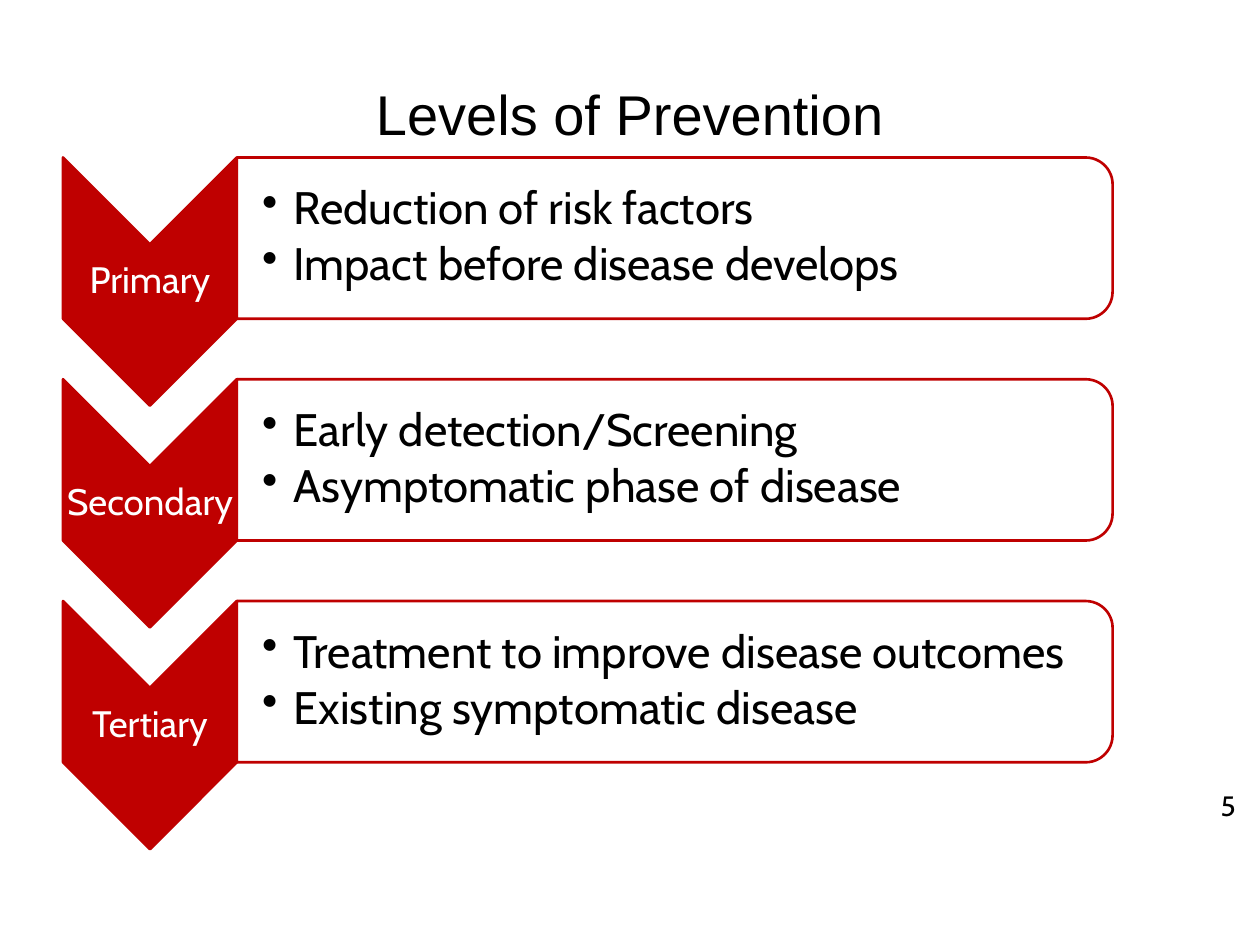
from pptx import Presentation
from pptx import util as u
from pptx.dml.color import RGBColor
from pptx.enum import shapes, text
from pptx.oxml import parse_xml
from pptx.oxml.ns import nsdecls, qn

COLORS = {"red": "BF0000", "white": "FFFFFF", "black": "000000"}
FONT = "Cabin"

LEVELS = [
    ("Primary", ["Reduction of risk factors", "Impact before disease develops"]),
    ("Secondary", ["Early detection/Screening", "Asymptomatic phase of disease"]),
    ("Tertiary", ["Treatment to improve disease outcomes", "Existing symptomatic disease"]),
]
TOP = 1.25
ROW_PITCH = 1.76
LABEL_LEFT, LABEL_WIDTH = 0.5, 1.38
CHEVRON_LENGTH = 1.97
PANEL_LEFT = LABEL_LEFT + LABEL_WIDTH
PANEL_WIDTH, PANEL_HEIGHT = 6.95, 1.28


def color(name):
    return RGBColor.from_string(COLORS[name])


def add_run(paragraph, words, size, color_name, font=FONT):
    run = paragraph.add_run()
    run.text = words
    run.font.size = u.Pt(size)
    run.font.name = font
    run.font.color.rgb = color(color_name)


def set_frame(frame, left_inset, inset):
    frame.word_wrap = True
    frame.vertical_anchor = text.MSO_ANCHOR.MIDDLE
    frame.margin_left = u.Inches(left_inset)
    frame.margin_top = frame.margin_right = frame.margin_bottom = u.Inches(inset)


def add_text_box(slide, left, top, width, height, left_inset, inset):
    box = slide.shapes.add_textbox(*map(u.Inches, (left, top, width, height)))
    set_frame(box.text_frame, left_inset, inset)
    return box.text_frame


def add_turned_shape(slide, kind, left, top, width, height, fill_name):
    turned_left = left + (width - height) / 2
    turned_top = top + (height - width) / 2
    shape = slide.shapes.add_shape(
        kind, *map(u.Inches, (turned_left, turned_top, height, width)))
    shape.rotation = 90
    shape.shadow.inherit = False
    shape.fill.solid()
    shape.fill.fore_color.rgb = color(fill_name)
    shape.line.color.rgb = color("red")
    shape.line.width = u.Pt(1.5)
    return shape


def set_opacity(shape, percent):
    fill_color = shape.fill._xPr.find(qn("a:solidFill"))[0]
    fill_color.append(parse_xml(f'<a:alpha {nsdecls("a")} val="{percent * 1000}"/>'))


def add_bullet(paragraph):
    properties = paragraph._p.get_or_add_pPr()
    properties.set("marL", str(u.Inches(0.25)))
    properties.set("indent", str(u.Inches(-0.25)))
    properties.append(parse_xml(f'<a:buChar {nsdecls("a")} char="•"/>'))


def add_title(slide, words):
    title = slide.shapes.title
    title.left, title.top, title.width, title.height = map(u.Inches, (0.25, 0.4, 9.5, 1))
    title.text_frame.vertical_anchor = text.MSO_ANCHOR.MIDDLE
    paragraph = title.text_frame.paragraphs[0]
    paragraph.alignment = text.PP_ALIGN.CENTER
    add_run(paragraph, words, 32, "black", "Arial")


def add_label(slide, top, words):
    add_turned_shape(slide, shapes.MSO_SHAPE.CHEVRON, LABEL_LEFT, top,
                     LABEL_WIDTH, CHEVRON_LENGTH, "red")
    frame = add_text_box(slide, LABEL_LEFT, top + LABEL_WIDTH / 2,
                         LABEL_WIDTH, CHEVRON_LENGTH - LABEL_WIDTH, 0.01, 0.01)
    paragraph = frame.paragraphs[0]
    paragraph.alignment = text.PP_ALIGN.CENTER
    paragraph.line_spacing = 0.9
    paragraph.space_after = u.Pt(7)
    add_run(paragraph, words, 21, "white")


def add_panel(slide, top, items):
    panel = add_turned_shape(slide, shapes.MSO_SHAPE.ROUND_2_SAME_RECTANGLE,
                             PANEL_LEFT, top, PANEL_WIDTH, PANEL_HEIGHT, "white")
    set_opacity(panel, 90)
    frame = add_text_box(slide, PANEL_LEFT, top + 0.06,
                         PANEL_WIDTH - 0.06, PANEL_HEIGHT - 0.12, 0.2, 0.02)
    for index, item in enumerate(items):
        paragraph = frame.add_paragraph() if index else frame.paragraphs[0]
        paragraph.level = 1
        paragraph.line_spacing = 0.9
        paragraph.space_after = u.Pt(4)
        add_bullet(paragraph)
        add_run(paragraph, item, 26, "black")


def add_page_number(slide, number):
    shape = slide.shapes.add_shape(shapes.MSO_SHAPE.DOUBLE_BRACKET,
                                   *map(u.Inches, (9.33, 6.18, 0.6, 0.43)))
    shape.adjustments[0] = 0.18
    shape.shadow.inherit = False
    shape.fill.background()
    shape.line.fill.background()
    set_frame(shape.text_frame, 0.1, 0.05)
    shape.text_frame.margin_right = u.Inches(0.1)
    paragraph = shape.text_frame.paragraphs[0]
    paragraph.alignment = text.PP_ALIGN.RIGHT
    add_run(paragraph, number, 16, "black")


def main():
    presentation = Presentation()
    presentation.slide_width, presentation.slide_height = u.Inches(10), u.Inches(7.5)
    slide = presentation.slides.add_slide(presentation.slide_layouts[5])
    add_title(slide, "Levels of Prevention")
    for row, (label, items) in enumerate(LEVELS):
        top = TOP + row * ROW_PITCH
        add_label(slide, top, label)
        add_panel(slide, top, items)
    add_page_number(slide, "5")
    presentation.save("out.pptx")


if __name__ == "__main__":
    main()
